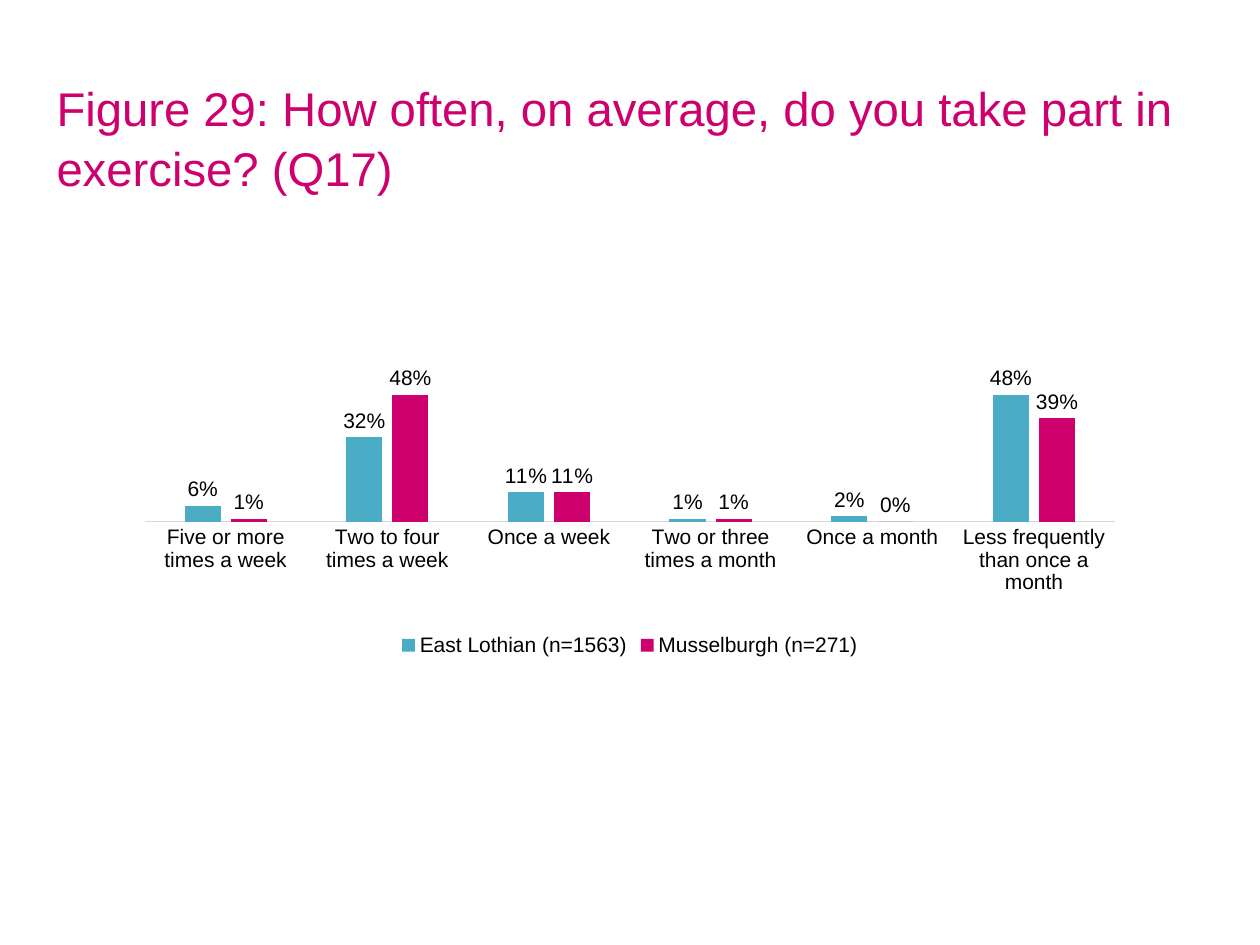
from dataclasses import dataclass

import pptx
import pptx.chart.data
import pptx.dml.color
import pptx.enum.chart
import pptx.enum.text
import pptx.oxml
import pptx.util
from pptx.util import Pt

FONT = "Arial"
BLACK, PINK, TEAL, GREY = "000000", "CD006E", "4BACC6", "D9D9D9"


@dataclass
class Area:
    name: str
    values: tuple[float, ...]
    color: str


CATEGORIES = (
    "Five or more times a week",
    "Two to four times a week",
    "Once a week",
    "Two or three times a month",
    "Once a month",
    "Less frequently than once a month",
)
AREAS = (
    Area("East Lothian (n=1563)", (0.06, 0.32, 0.11, 0.01, 0.02, 0.48), TEAL),
    Area("Musselburgh (n=271)", (0.01, 0.48, 0.11, 0.01, 0, 0.39), PINK),
)


def rgb(color: str) -> pptx.dml.color.RGBColor:
    return pptx.dml.color.RGBColor.from_string(color)


def style_font(font, size: float, color: str) -> None:
    font.name = FONT
    font.size = Pt(size)
    font.bold = False
    font.color.rgb = rgb(color)


def add_title(slide, text: str) -> None:
    shape = slide.shapes.add_textbox(Pt(25.2), Pt(21.6), Pt(694.8), Pt(112.3))
    frame = shape.text_frame
    frame.word_wrap = True
    frame.vertical_anchor = pptx.enum.text.MSO_ANCHOR.MIDDLE
    paragraph = frame.paragraphs[0]
    paragraph.line_spacing = 1.05
    run = paragraph.add_run()
    run.text = text
    style_font(run.font, 27, PINK)


def set_plot_layout(chart, x: float, y: float, w: float, h: float) -> None:
    """Fix the inner plot area, as fractions of the chart."""
    plot_area = chart._chartSpace.chart.plotArea
    for old in plot_area.xpath("c:layout"):
        plot_area.remove(old)
    sizes = "".join(f'<c:{key} val="{value}"/>' for key, value in zip("xywh", (x, y, w, h)))
    plot_area.insert(0, pptx.oxml.parse_xml(
        '<c:layout xmlns:c="http://schemas.openxmlformats.org/drawingml/2006/chart">'
        '<c:manualLayout><c:layoutTarget val="inner"/>'
        '<c:xMode val="edge"/><c:yMode val="edge"/>'
        f"{sizes}</c:manualLayout></c:layout>"))


def add_exercise_chart(slide) -> None:
    data = pptx.chart.data.CategoryChartData(number_format="0%")
    data.categories = CATEGORIES
    for area in AREAS:
        data.add_series(area.name, area.values)
    chart = slide.shapes.add_chart(
        pptx.enum.chart.XL_CHART_TYPE.COLUMN_CLUSTERED,
        Pt(71.3), Pt(162), Pt(577.4), Pt(216), data).chart
    chart.has_title = False
    style_font(chart.font, 12, BLACK)
    set_plot_layout(chart, 0.02, 0.21, 0.96, 0.42)

    # Columns and their labels
    plot = chart.plots[0]
    plot.gap_width = 219
    plot.overlap = -27
    plot.vary_by_categories = False
    for series, area in zip(plot.series, AREAS):
        series.format.fill.solid()
        series.format.fill.fore_color.rgb = rgb(area.color)
        series.invert_if_negative = False
        labels = series.data_labels
        labels.show_value = True
        labels.number_format = "0%"
        labels.number_format_is_linked = False
        labels.position = pptx.enum.chart.XL_LABEL_POSITION.OUTSIDE_END
        style_font(labels.font, 12, BLACK)

    # Axes
    no_mark = pptx.enum.chart.XL_TICK_MARK.NONE
    category_axis = chart.category_axis
    category_axis.major_tick_mark = category_axis.minor_tick_mark = no_mark
    category_axis.format.line.color.rgb = rgb(GREY)
    category_axis.format.line.width = Pt(0.75)
    style_font(category_axis.tick_labels.font, 12, BLACK)
    value_axis = chart.value_axis
    value_axis.has_major_gridlines = False
    value_axis.minimum_scale = 0
    value_axis.maximum_scale = 0.6
    value_axis.tick_labels.number_format = "0%"
    value_axis.tick_labels.number_format_is_linked = False
    value_axis.visible = False

    # Legend
    chart.has_legend = True
    chart.legend.position = pptx.enum.chart.XL_LEGEND_POSITION.BOTTOM
    chart.legend.include_in_layout = False
    style_font(chart.legend.font, 12, BLACK)


def main() -> None:
    presentation = pptx.Presentation()
    presentation.slide_width = Pt(720)
    presentation.slide_height = Pt(540)
    slide = presentation.slides.add_slide(presentation.slide_layouts[6])
    add_title(slide, "Figure 29: How often, on average, do you take part in exercise? (Q17)")
    add_exercise_chart(slide)
    presentation.save("out.pptx")


if __name__ == "__main__":
    main()
